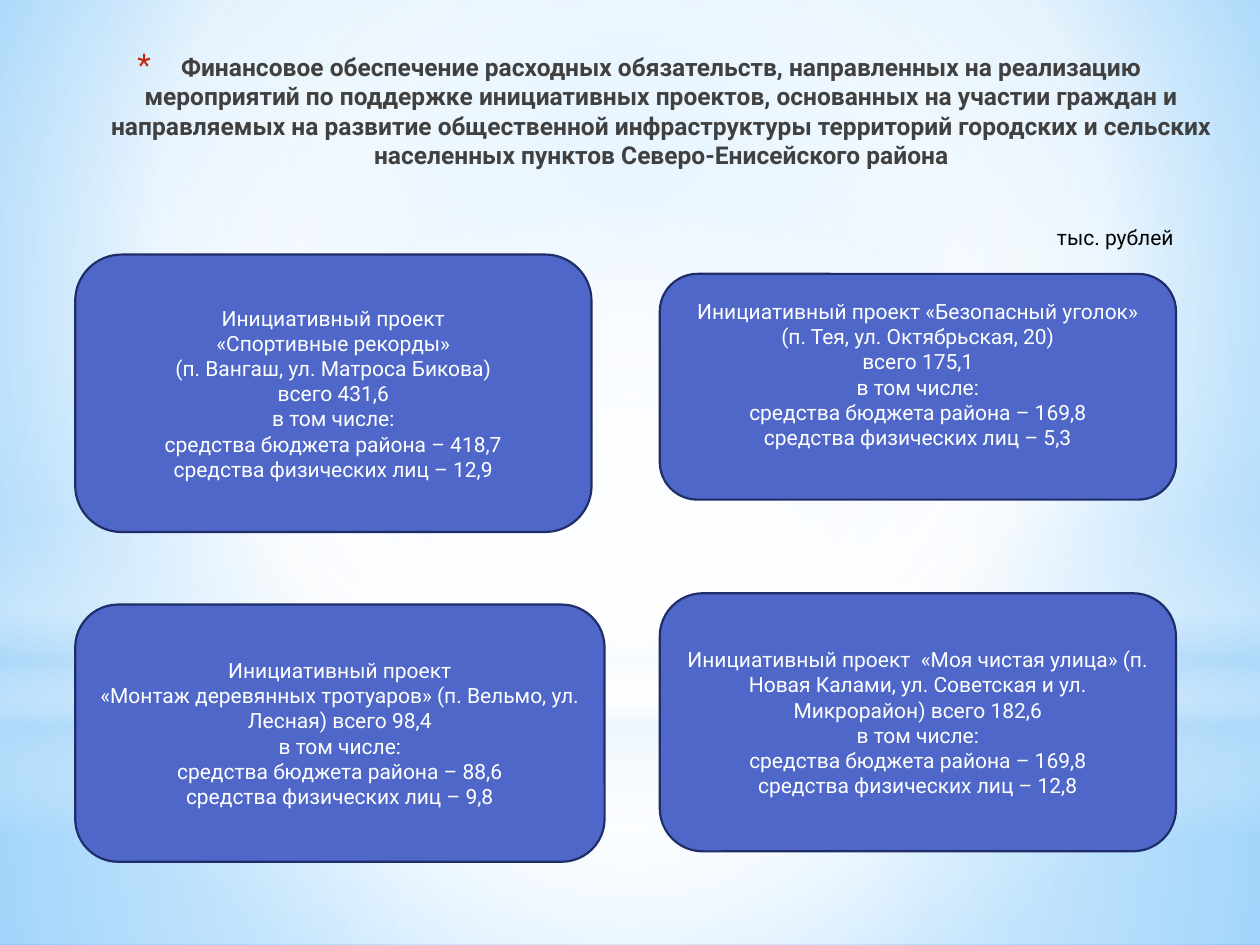
from lxml.etree import SubElement
from pptx import Presentation
from pptx.dml.color import RGBColor
from pptx.enum.shapes import MSO_SHAPE
from pptx.enum.text import MSO_ANCHOR, PP_ALIGN
from pptx.oxml.ns import qn
from pptx.util import Pt


def paint_gradient(owner, stops, center=None, angle=90):
    """Fill with (position, colour, opacity) stops in percent: radial around center, else linear."""
    owner.fill_format.gradient() if hasattr(owner, "fill_format") else owner.fill.gradient()
    holder = page.element if owner is page.background else owner.element
    gradient = holder.find(".//" + qn("a:gradFill"))
    for child in list(gradient):
        gradient.remove(child)
    stop_list = SubElement(gradient, qn("a:gsLst"))
    for position, colour, opacity in stops:
        stop = SubElement(stop_list, qn("a:gs"), pos=str(position * 1000))
        tint = SubElement(stop, qn("a:srgbClr"), val=colour)
        if opacity < 100:
            SubElement(tint, qn("a:alpha"), val=str(opacity * 1000))
    if center:
        radial = SubElement(gradient, qn("a:path"), path="circle")
        sides = {side: str(value * 1000) for side, value in zip("ltrb", center)}
        SubElement(radial, qn("a:fillToRect"), **sides)
    else:
        SubElement(gradient, qn("a:lin"), ang=str(angle * 60000), scaled="0")


def write(paragraph, text, size, colour, bold=False):
    span = paragraph.add_run()
    span.text = text
    font_format = {"name": "Roboto", "size": Pt(size), "bold": bold}
    for name, value in font_format.items():
        setattr(span.font, name, value)
    span.font.color.rgb = RGBColor.from_string(colour)


deck = Presentation()
deck.slide_width, deck.slide_height = Pt(720), Pt(540)
page = deck.slides.add_slide(deck.slide_layouts[6])

# Background: sky gradient under translucent light layers
paint_gradient(page.background,
               [(0, "9ED5FF", 100), (60, "FFFFFF", 100), (100, "5BB9FF", 100)],
               (20, 10, 20, 60))
MIDDLE = (50, 50, 50, 50)
layers = [
    (MSO_SHAPE.RECTANGLE, 402, 138, MIDDLE,
     [(0, "FFFFFF", 91), (37, "FFFFFF", 76), (100, "B4DCFA", 79)]),
    (MSO_SHAPE.RECTANGLE, 0, 402, MIDDLE,
     [(0, "FFFFFF", 89), (48, "FFFFFF", 62), (100, "B4DCFA", 79)]),
    (MSO_SHAPE.RECTANGLE, 297, 180, None,
     [(0, "FFFFFF", 0), (29, "FFFFFF", 30), (45, "B4DCFA", 40),
      (55, "FFFFFF", 26), (65, "B4DCFA", 60), (100, "FFFFFF", 0)]),
    (MSO_SHAPE.OVAL, 126, 402, MIDDLE,
     [(0, "FFFFFF", 100), (56, "FFFFFF", 0)]),
]
for kind, top, height, center, stops in layers:
    layer = page.shapes.add_shape(kind, 0, Pt(top), Pt(720), Pt(height))
    layer.shadow.inherit = False
    layer.line.fill.background()
    paint_gradient(layer, stops, center)

# Title with a red asterisk bullet
title = page.shapes.add_textbox(Pt(31), Pt(26), Pt(669), Pt(85))
title.text_frame.word_wrap = True
heading = title.text_frame.paragraphs[0]
heading.alignment = PP_ALIGN.CENTER
write(heading,
      "Финансовое обеспечение расходных обязательств, направленных на реализацию "
      "мероприятий по поддержке инициативных проектов, основанных на участии граждан и "
      "направляемых на развитие общественной инфраструктуры территорий городских и сельских "
      "населенных пунктов Северо-Енисейского района", 14, "404040", bold=True)
properties = heading._p.get_or_add_pPr()
properties.set("marL", str(Pt(25)))
properties.set("indent", str(-Pt(25)))
bullet_colour = SubElement(properties, qn("a:buClr"))
SubElement(bullet_colour, qn("a:srgbClr"), val="C3260C")
SubElement(properties, qn("a:buSzPct"), val="128000")
SubElement(properties, qn("a:buFont"), typeface="Roboto")
SubElement(properties, qn("a:buChar"), char="*")

# Project cards: left, top, width, height, bottom margin, lines
LEFT, RIGHT, WIDTH = 43, 377, 295
cards = [
    (LEFT, 145.5, WIDTH, 158.5, 3.6,
     ["Инициативный проект", "«Спортивные рекорды»", "(п. Вангаш, ул. Матроса Бикова)",
      "всего 431,6", "в том числе:",
      "средства бюджета района – 418,7", "средства физических лиц – 12,9"]),
    (RIGHT, 156.5, WIDTH, 129, 18,
     ["Инициативный проект «Безопасный уголок»", "(п. Тея, ул. Октябрьская, 20)",
      "всего 175,1", "в том числе:",
      "средства бюджета района – 169,8", "средства физических лиц – 5,3"]),
    (RIGHT, 339, WIDTH, 147.5, 3.6,
     ["Инициативный проект  «Моя чистая улица» (п. Новая Калами, ул. Советская и ул. "
      "Микрорайон) всего 182,6", "в том числе:",
      "средства бюджета района – 169,8", "средства физических лиц – 12,8"]),
    (LEFT, 345.5, 302.5, 147, 3.6,
     ["Инициативный проект",
      "«Монтаж деревянных тротуаров» (п. Вельмо, ул. Лесная) всего 98,4", "в том числе:",
      "средства бюджета района – 88,6", "средства физических лиц – 9,8"]),
]
for left, top, width, height, bottom_margin, lines in cards:
    card = page.shapes.add_shape(MSO_SHAPE.ROUNDED_RECTANGLE,
                                 Pt(left), Pt(top), Pt(width), Pt(height))
    card.shadow.inherit = False
    card.fill.solid()
    card.fill.fore_color.rgb = RGBColor.from_string("4E67C8")
    card.line.color.rgb = RGBColor.from_string("1F2E69")
    card.line.width = Pt(1.25)
    frame = card.text_frame
    frame_format = {"word_wrap": True, "vertical_anchor": MSO_ANCHOR.MIDDLE,
                    "margin_bottom": Pt(bottom_margin)}
    for name, value in frame_format.items():
        setattr(frame, name, value)
    for index, line in enumerate(lines):
        para = frame.add_paragraph() if index else frame.paragraphs[0]
        para.alignment = PP_ALIGN.CENTER
        write(para, line, 12, "FFFFFF")

# Unit of measure
unit = page.shapes.add_textbox(Pt(592.5), Pt(119), Pt(102), Pt(29))
unit.text_frame.word_wrap = True
unit.text_frame.margin_left = Pt(11.5)
unit.text_frame.margin_top = Pt(9)
write(unit.text_frame.paragraphs[0], "тыс. рублей", 12, "000000")

deck.save("out.pptx")
